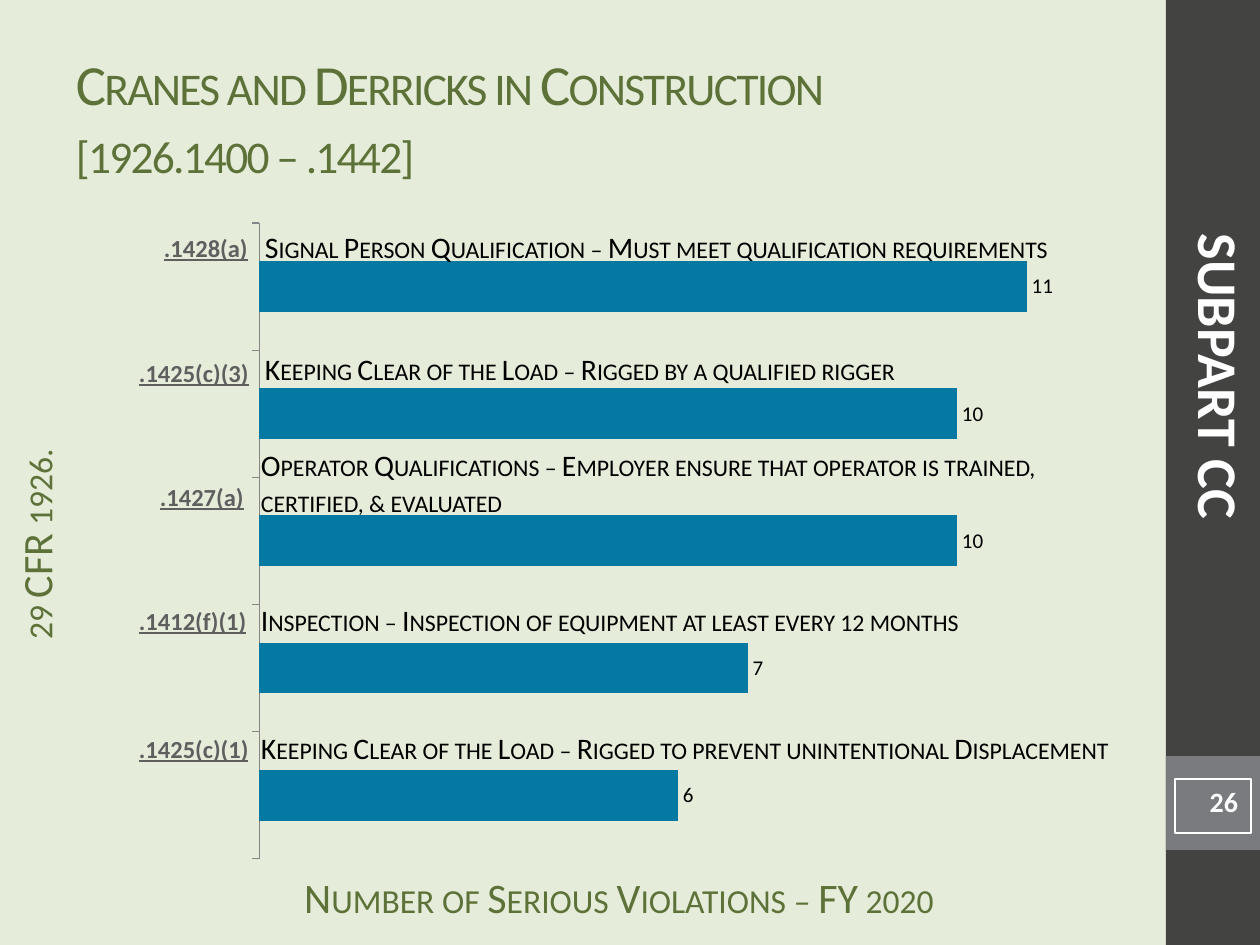
from dataclasses import dataclass

from pptx import Presentation
from pptx.chart.data import CategoryChartData
from pptx.dml.color import RGBColor
from pptx.enum.chart import XL_CHART_TYPE, XL_LABEL_POSITION, XL_TICK_LABEL_POSITION, XL_TICK_MARK
from pptx.enum.shapes import MSO_SHAPE
from pptx.enum.text import MSO_ANCHOR, PP_ALIGN
from pptx.util import Emu, Pt

BAR = XL_CHART_TYPE.BAR_CLUSTERED
OUTSIDE_END = XL_LABEL_POSITION.OUTSIDE_END
NO_LABELS = XL_TICK_LABEL_POSITION.NONE
TICK_OUT, TICK_NONE = XL_TICK_MARK.OUTSIDE, XL_TICK_MARK.NONE
RECTANGLE = MSO_SHAPE.RECTANGLE
TOP, MIDDLE = MSO_ANCHOR.TOP, MSO_ANCHOR.MIDDLE
LEFT, CENTER, RIGHT = PP_ALIGN.LEFT, PP_ALIGN.CENTER, PP_ALIGN.RIGHT

PX = 914400 / 126
FULL_INSET = (13, 6, 13, 6)
FOOTER_INSET = (13, 0, 13, 6)
NO_INSET = (0, 0, 0, 0)


@dataclass(frozen=True)
class Theme:
    """Colours, font and type sizes of the slide."""
    font: str = "Calibri"
    background: str = "E5ECD9"
    sidebar: str = "434342"
    band: str = "797B7E"
    green: str = "5D7238"
    bar: str = "0679A3"
    axis: str = "868686"
    code: str = "5F5F5F"
    ink: str = "000000"
    white: str = "FFFFFF"
    title_size: float = 32.4
    subpart_size: int = 32
    caption_size: int = 24
    description_size: int = 17
    number_size: int = 16
    code_size: int = 14
    value_size: int = 12


def px(*lengths):
    """Turn pixel lengths into EMU."""
    return [Emu(round(length * PX)) for length in lengths]


def rgb(colour):
    """Return the colour object for a hex string."""
    return RGBColor.from_string(colour)


class SlideBuilder:
    """Draws styled elements on one slide."""

    def __init__(self, slide, theme):
        """Keep the slide and theme, and paint the background."""
        self.slide = slide
        self.theme = theme
        slide.background.fill.solid()
        slide.background.fill.fore_color.rgb = rgb(theme.background)

    def rectangle(self, box, fill=None, line=None):
        """Add a rectangle with an optional fill and outline."""
        shape = self.slide.shapes.add_shape(RECTANGLE, *px(*box))
        shape.shadow.inherit = False
        if fill:
            shape.fill.solid()
            shape.fill.fore_color.rgb = rgb(fill)
        else:
            shape.fill.background()
        if line:
            shape.line.color.rgb = rgb(line)
            shape.line.width = Pt(1.5)
        else:
            shape.line.fill.background()
        return shape

    def letter(self, shape, wording, size, colour, align=LEFT, anchor=TOP, inset=FULL_INSET,
               bold=False, underline=False, small_caps=False, spacing=0):
        """Put formatted wording into a shape."""
        frame = shape.text_frame
        frame.word_wrap = True
        frame.vertical_anchor = anchor
        frame.margin_left, frame.margin_top, frame.margin_right, frame.margin_bottom = px(*inset)
        frame.text = wording
        for paragraph in frame.paragraphs:
            paragraph.alignment = align
            for run in paragraph.runs:
                run.font.name = self.theme.font
                run.font.size = Pt(size)
                run.font.bold = bold
                run.font.underline = underline
                run.font.color.rgb = rgb(colour)
                properties = run._r.get_or_add_rPr()
                if small_caps:
                    properties.set("cap", "small")
                if spacing:
                    properties.set("spc", str(spacing * 100))

    def text(self, box, wording, size, colour, rotation=0, **style):
        """Add a text box, turned by rotation degrees."""
        text_box = self.slide.shapes.add_textbox(*px(*box))
        text_box.rotation = rotation
        self.letter(text_box, wording, size, colour, **style)

    def bar_chart(self, box, categories, values, maximum):
        """Add a horizontal bar chart with value labels."""
        data = CategoryChartData()
        data.categories = categories
        data.add_series("Series 1", values)
        chart = self.slide.shapes.add_chart(BAR, *px(*box), data).chart
        chart.has_legend = False
        chart.has_title = False
        chart.font.name = self.theme.font
        chart.font.size = Pt(self.theme.value_size)
        chart.font.color.rgb = rgb(self.theme.ink)

        category_axis = chart.category_axis
        category_axis.tick_label_position = NO_LABELS
        category_axis.major_tick_mark = TICK_OUT
        category_axis.minor_tick_mark = TICK_NONE
        category_axis.format.line.color.rgb = rgb(self.theme.axis)
        value_axis = chart.value_axis
        value_axis.visible = False
        value_axis.has_major_gridlines = False
        value_axis.minimum_scale = 0
        value_axis.maximum_scale = maximum

        plot = chart.plots[0]
        plot.gap_width = 150
        plot.vary_by_categories = False
        violations = plot.series[0]
        violations.format.fill.solid()
        violations.format.fill.fore_color.rgb = rgb(self.theme.bar)
        labels = violations.data_labels
        labels.show_value = True
        labels.position = OUTSIDE_END
        labels.font.name = self.theme.font
        labels.font.size = Pt(self.theme.value_size)
        labels.font.color.rgb = rgb(self.theme.ink)


STANDARDS = [
    (".1428(a)", (151, 227, 113, 43),
     "Signal Person Qualification – Must meet qualification requirements",
     (252, 223, 829, 49), FULL_INSET),
    (".1425(c)(3)", (126, 352, 145, 43),
     "Keeping Clear of the Load – Rigged by a qualified rigger",
     (252, 345, 703, 49), FULL_INSET),
    (".1427(a)", (147, 476, 116, 43),
     "Operator Qualifications – Employer ensure that operator is trained, certified, & evaluated",
     (248, 441, 882, 84), FULL_INSET),
    (".1412(f)(1)", (126, 600, 136, 43),
     "Inspection – Inspection of equipment at least every 12 months",
     (261, 602, 829, 33), NO_INSET),
    (".1425(c)(1)", (126, 728, 137, 43),
     "Keeping Clear of the Load – Rigged to prevent unintentional Displacement",
     (261, 730, 871, 48), NO_INSET),
]


def main():
    """Build the slide and save it."""
    theme = Theme()
    deck = Presentation()
    deck.slide_width, deck.slide_height = px(1260, 945)
    page = SlideBuilder(deck.slides.add_slide(deck.slide_layouts[6]), theme)

    page.rectangle((1166, 0, 94, 945), theme.sidebar)
    page.rectangle((1166, 756, 94, 94), theme.band)
    caption = dict(size=theme.caption_size, colour=theme.green, align=CENTER,
                   inset=FOOTER_INSET, small_caps=True)
    page.text((262, 872, 714, 42), "Number of Serious Violations – FY 2020", **caption)
    page.text((-217, 508, 528, 73), "29 CFR 1926.", rotation=270, **caption)
    page.bar_chart((242, 210, 872, 662), ["1", "2", "3", "4", "5"], [6, 7, 10, 10, 11], 12)
    page.text((63, 38, 1050, 158), "Cranes and Derricks in Construction\v[1926.1400 – .1442]",
              theme.title_size, theme.green, anchor=MIDDLE, small_caps=True, spacing=-1)
    page_number = page.rectangle((1175, 779, 76, 54), line=theme.white)
    page.letter(page_number, "26", theme.number_size, theme.white, align=RIGHT, bold=True)
    page.text((843, 336, 753, 81), "SUBPART CC", theme.subpart_size, theme.white,
              rotation=90, align=CENTER, bold=True)

    for code, code_box, description, description_box, inset in STANDARDS:
        page.text(description_box, description, theme.description_size, theme.ink,
                  inset=inset, small_caps=True)
        page.text(code_box, code, theme.code_size, theme.code, bold=True, underline=True)

    deck.save("out.pptx")


if __name__ == "__main__":
    main()
